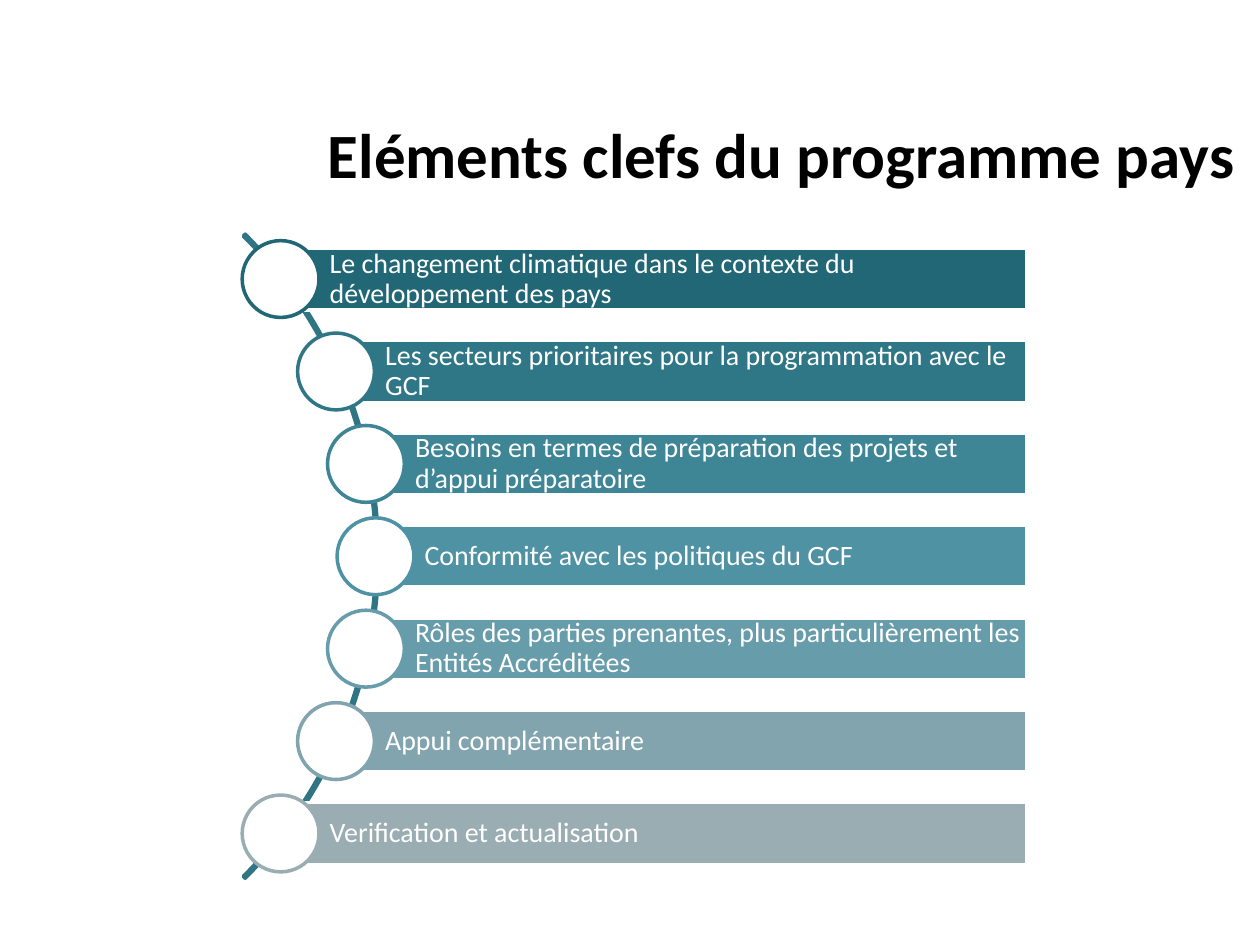
from math import sqrt

from pptx import Presentation
from pptx.dml.color import RGBColor
from pptx.enum.shapes import MSO_SHAPE
from pptx.enum.text import MSO_ANCHOR, PP_ALIGN
from pptx.util import Inches, Pt

ARC, BAR, CIRCLE = MSO_SHAPE.BLOCK_ARC, MSO_SHAPE.RECTANGLE, MSO_SHAPE.OVAL
MIDDLE = MSO_ANCHOR.MIDDLE
LEFT, RIGHT = PP_ALIGN.LEFT, PP_ALIGN.RIGHT

FONT = "Calibri"
COLOURS = {"arc": "307583", "white": "FFFFFF", "title": "000000"}
ELEMENTS = [
    ("Le changement climatique dans le contexte du développement des pays", "226775"),
    ("Les secteurs prioritaires pour la programmation avec le GCF", "2F7787"),
    ("Besoins en termes de préparation des projets et d’appui préparatoire", "3E8596"),
    ("Conformité avec les politiques du GCF", "4F92A3"),
    ("Rôles des parties prenantes, plus particulièrement les Entités Accréditées", "679CAA"),
    ("Appui complémentaire", "81A4AE"),
    ("Verification et actualisation", "9AADB3"),
]


def add_outlined(slide, preset, box, line, fill=None):
    shape = slide.shapes.add_shape(preset, *(Inches(v) for v in box))
    shape.shadow.inherit = False
    if fill:
        shape.fill.solid()
        shape.fill.fore_color.rgb = RGBColor.from_string(fill)
    else:
        shape.fill.background()
    shape.line.color.rgb = RGBColor.from_string(line)
    shape.line.width = Pt(2)
    return shape


def write(paragraph, text, size, colour, align, bold=False):
    paragraph.alignment = align
    run = paragraph.add_run()
    run.text = text
    run.font.name = FONT
    run.font.size = Pt(size)
    run.font.bold = bold
    run.font.color.rgb = RGBColor.from_string(colour)


def add_title(slide, box):
    frame = slide.shapes.add_textbox(*(Inches(v) for v in box)).text_frame
    frame.word_wrap = True
    write(frame.paragraphs[0], "Eléments clefs du programme pays", 36,
          COLOURS["title"], RIGHT, bold=True)


def add_bar(slide, box, text, colour):
    bar = add_outlined(slide, BAR, box, COLOURS["white"], colour)
    frame = bar.text_frame
    frame.word_wrap = True
    frame.vertical_anchor = MIDDLE
    frame.margin_left = Inches(0.39)
    frame.margin_right = frame.margin_top = frame.margin_bottom = Inches(0.04)
    paragraph = frame.paragraphs[0]
    paragraph.line_spacing = 0.9
    write(paragraph, text, 16, COLOURS["white"], LEFT)


def add_curved_list(slide, box):
    """Bars whose circles are centred on an arc bulging to the right."""
    left, top, width, height = box
    diameter, bar_height, radius = 0.61, 0.49, 3.59
    pitch = (height - diameter) / (len(ELEMENTS) - 1)
    arc_size = 7.23
    centre_x = left + 1.07 - radius
    centre_y = top + height / 2

    # Arc from 315 to 45 degrees
    arc = add_outlined(slide, ARC, (centre_x - arc_size / 2, centre_y - arc_size / 2,
                                    arc_size, arc_size), COLOURS["arc"])
    for index, value in enumerate((189, 27, 0.003)):
        arc.adjustments[index] = value

    # One bar and one circle for each element
    for index, (text, colour) in enumerate(ELEMENTS):
        offset = (index - (len(ELEMENTS) - 1) / 2) * pitch
        x = centre_x + sqrt(radius ** 2 - offset ** 2)
        y = centre_y + offset
        add_bar(slide, (x, y - bar_height / 2, left + width - x, bar_height), text, colour)
        add_outlined(slide, CIRCLE, (x - diameter / 2, y - diameter / 2, diameter, diameter),
                     colour, COLOURS["white"])


def main():
    deck = Presentation()
    deck.slide_width, deck.slide_height = Inches(10), Inches(7.5)
    slide = deck.slides.add_slide(deck.slide_layouts[6])
    add_curved_list(slide, (1.91, 1.91, 6.24, 5.01))
    add_title(slide, (2.17, 0.87, 7.73, 0.74))
    deck.save("out.pptx")


if __name__ == "__main__":
    main()
